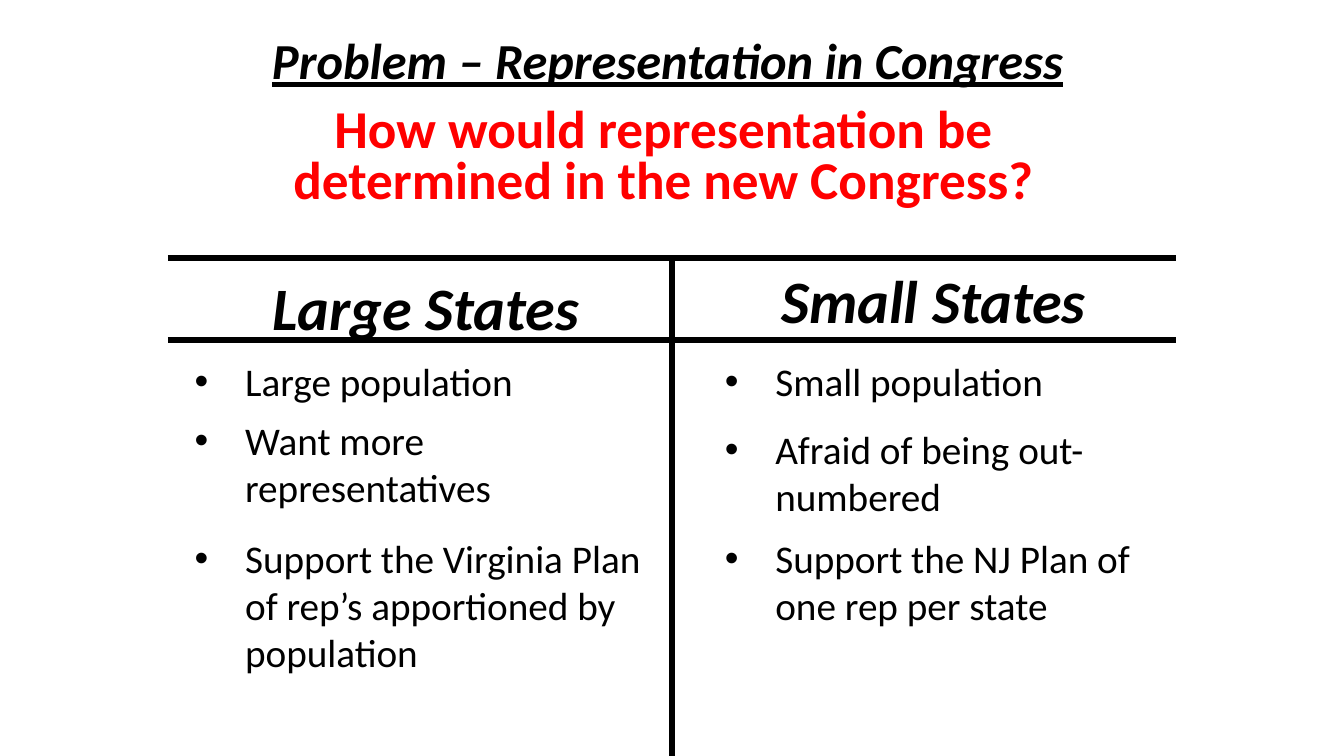
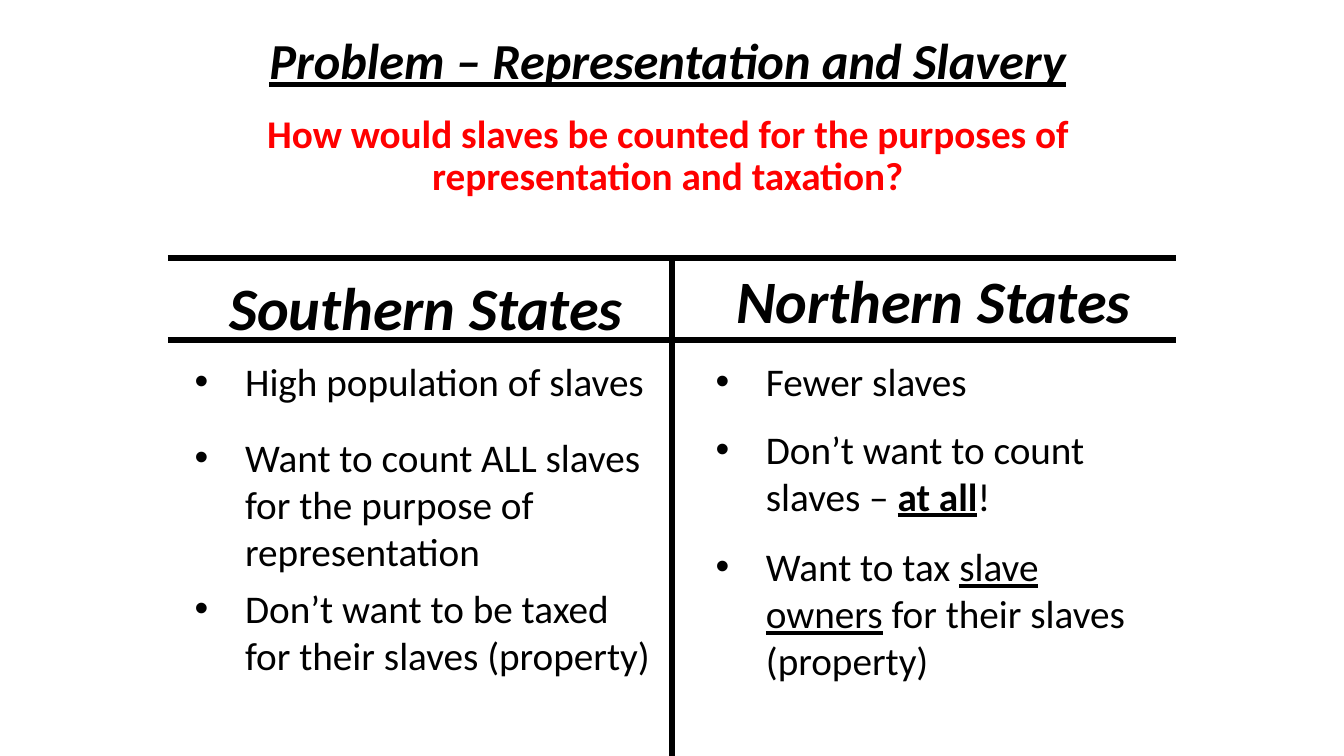
from dataclasses import dataclass

from lxml.etree import SubElement
from pptx import Presentation
from pptx.dml.color import RGBColor
from pptx.enum.shapes import MSO_CONNECTOR
from pptx.enum.text import MSO_ANCHOR, PP_ALIGN
from pptx.oxml.ns import qn
from pptx.util import Emu, Pt

PX = 9525  # EMU in one px, 96 px to the inch


@dataclass(frozen=True)
class Theme:
    font: str = "Calibri"
    ink: RGBColor = RGBColor(0, 0, 0)
    accent: RGBColor = RGBColor(255, 0, 0)
    title: int = 36
    heading: int = 43
    body: int = 28
    rule: int = 4


class Deck:
    def __init__(self, theme):
        self.theme = theme
        self.prs = Presentation()
        self.prs.slide_width, self.prs.slide_height = self.px(1280, 720)
        self.s = None

    @staticmethod
    def px(*lengths):
        return [Emu(n * PX) for n in lengths]

    def new_slide(self):
        self.s = self.prs.slides.add_slide(self.prs.slide_layouts[6])

    def text(self, box, runs, size, color=None, align=PP_ALIGN.CENTER,
             anchor=MSO_ANCHOR.TOP, spacing=1.0, **style):
        """Add a text box; runs is a string or a list of (text, format) pairs."""
        tf = self.s.shapes.add_textbox(*self.px(*box)).text_frame
        tf.word_wrap, tf.vertical_anchor = True, anchor
        p = tf.paragraphs[0]
        p.alignment, p.line_spacing = align, spacing
        base = {"name": self.theme.font, "size": Pt(size), **style}
        for words, extra in [(runs, {})] if isinstance(runs, str) else runs:
            r = p.add_run()
            r.text = words
            for key, value in {**base, **extra}.items():
                setattr(r.font, key, value)
            r.font.color.rgb = color or self.theme.ink
        return p

    def title(self, words):
        self.text((160, 0, 952, 120), words, self.theme.title, spacing=0.9,
                  anchor=MSO_ANCHOR.MIDDLE, bold=True, italic=True, underline=True)

    def question(self, left, top, words, size, spacing):
        self.text((left, top, 808, 112), words, size, self.theme.accent,
                  spacing=spacing, bold=True)

    def heading(self, box, words):
        self.text(box, words, self.theme.heading, bold=True, italic=True)

    def bullet(self, box, runs):
        p = self.text(box, runs, self.theme.body, align=PP_ALIGN.LEFT)
        pPr = p._p.get_or_add_pPr()
        indent = 48 * PX
        pPr.set("marL", str(indent))
        pPr.set("indent", str(-indent))
        SubElement(pPr, qn("a:buFont")).set("typeface", "Arial")
        SubElement(pPr, qn("a:buChar")).set("char", "•")

    def line(self, x1, y1, x2, y2):
        sp = self.s.shapes.add_connector(MSO_CONNECTOR.STRAIGHT,
                                         *self.px(x1, y1, x2, y2))
        sp.line.color.rgb = self.theme.ink
        sp.line.width = Pt(self.theme.rule)
        SubElement(sp._element.spPr, qn("a:effectLst"))

    def t_chart(self, headings, columns):
        """Compare two sides: columns are (left, width, [(top, runs), ...])."""
        boxes = (187, 253, 437, 72), (681, 246, 416, 74)
        for box, words in zip(boxes, headings):
            self.heading(box, words)
        for y in (324, 246):
            self.line(160, y, 1120, y)
        self.line(640, 246, 640, 720)
        for left, width, points in columns:
            for top, runs in points:
                self.bullet((left, top, width, 120), runs)


def main():
    deck = Deck(Theme())

    # Large and small states
    deck.new_slide()
    deck.title("Problem – Representation in Congress")
    deck.question(228, 98, "How would representation be determined in the new Congress?",
                  38, 0.8)
    deck.t_chart(("Large States", "Small States"), [
        (176, 456, [
            (336, "Large population"),
            (392, "Want more representatives"),
            (504, "Support the Virginia Plan of rep’s apportioned by population"),
        ]),
        (681, 416, [
            (336, "Small population"),
            (400, "Afraid of being out-numbered"),
            (504, "Support the NJ Plan of one rep per state"),
        ]),
    ])

    # Southern and northern states
    deck.new_slide()
    deck.title("Problem – Representation and Slavery")
    deck.question(232, 104, "How would slaves be counted for the purposes of "
                  "representation and taxation?", deck.theme.body, 0.9)
    deck.t_chart(("Southern States", "Northern States"), [
        (176, 456, [
            (336, "High population of slaves"),
            (408, "Want to count ALL slaves for the purpose of representation"),
            (552, "Don’t want to be taxed for their slaves (property)"),
        ]),
        (672, 416, [
            (336, "Fewer slaves"),
            (400, [("Don’t want to count slaves – ", {}),
                   ("at all", {"bold": True, "underline": True}), ("!", {})]),
            (512, [("Want to tax ", {}), ("slave owners", {"underline": True}),
                   (" for their slaves (property)", {})]),
        ]),
    ])

    deck.prs.save("out.pptx")


if __name__ == "__main__":
    main()
